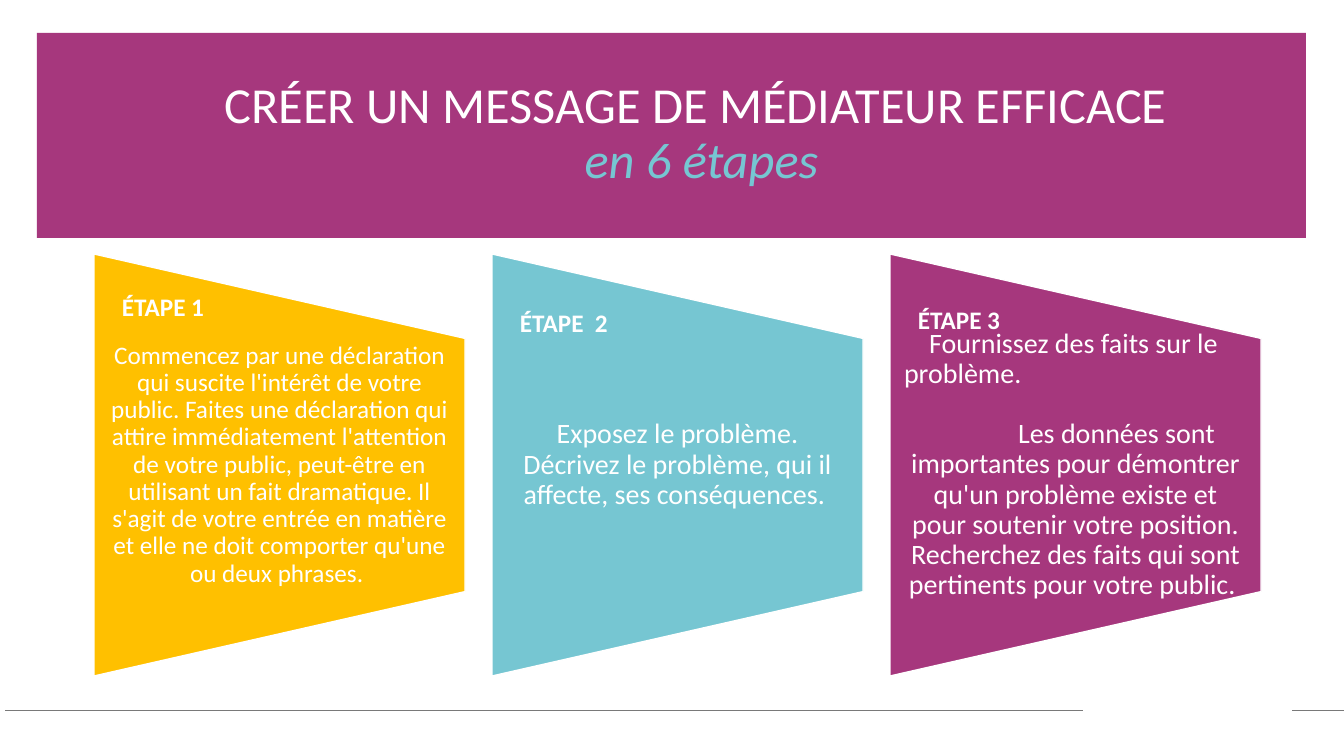
from pptx import Presentation
from pptx import util as u
from pptx.dml.color import RGBColor
from pptx.enum import shapes, text
from pptx.oxml.ns import qn
from lxml import etree

HUES = {"plum": "A6377D", "gold": "FFC000", "teal": "76C6D2",
        "white": "FFFFFF", "gray": "797979"}
TITLE = [("CRÉER UN MESSAGE DE MÉDIATEUR EFFICACE ", "white", False),
         ("en 6 étapes", "teal", True)]
STEPS = [
    {"label": "ÉTAPE 1", "top": 286, "hue": "gold", "size": 18, "inset": 12,
     "paras": [("Commencez par une déclaration qui suscite l'intérêt de votre public. "
                "Faites une déclaration qui attire immédiatement l'attention de votre "
                "public, peut-être en utilisant un fait dramatique. Il s'agit de votre "
                "entrée en matière et elle ne doit comporter qu'une ou deux phrases. ",
                "CENTER", 0)]},
    {"label": "ÉTAPE  2", "top": 302, "hue": "teal", "size": 20, "inset": 14,
     "paras": [("Exposez le problème. Décrivez le problème, qui il affecte, "
                "ses conséquences. ", "CENTER", 0)]},
    {"label": "ÉTAPE 3", "top": 299, "hue": "plum", "size": 20, "inset": 14,
     "paras": [("Fournissez des faits sur le problème.", "LEFT", 25),
               ("Les données sont importantes pour démontrer qu'un problème existe "
                "et pour soutenir votre position. Recherchez des faits qui sont "
                "pertinents pour votre public. ", "CENTER", 82)]},
]
RULES = [(1083, 5), (1344, 1292)]
LEFT, PITCH, WIDE, HIGH, MID = 94, 398, 371, 422, 465
BODY = 254


def px(n):
    return u.Emu(round(n * 914400 / 100.8))


def box(*nums):
    return [px(n) for n in nums]


def rgb(name):
    return RGBColor.from_string(HUES[name])


def style(item, **form):
    for key, val in form.items():
        setattr(item, key, val)


def ink(font, size, hue="white", **form):
    style(font, name="Calibri", size=u.Pt(size), **form)
    font.color.rgb = rgb(hue)


def block(kind, hue, *spot):
    shape = slide.shapes.add_shape(kind, *box(*spot))
    shape.shadow.inherit = False
    shape.fill.solid()
    shape.fill.fore_color.rgb = rgb(hue)
    return shape


def panel(step, x):
    trap = block(shapes.MSO_SHAPE.FLOWCHART_MANUAL_OPERATION, step["hue"],
                 x + (WIDE - HIGH) / 2, MID - WIDE / 2, HIGH, WIDE)
    trap.rotation = 270
    trap.line.color.rgb = rgb("white")
    trap.line.width = u.Pt(1)

    frame = slide.shapes.add_textbox(*box(x, MID - BODY / 2, WIDE, BODY)).text_frame
    side = px(step["inset"])
    style(frame, word_wrap=True, vertical_anchor=text.MSO_ANCHOR.MIDDLE,
          margin_left=side, margin_right=side, margin_top=0, margin_bottom=0)
    for i, (words, align, indent) in enumerate(step["paras"]):
        para = frame.paragraphs[0] if i == 0 else frame.add_paragraph()
        style(para, alignment=getattr(text.PP_ALIGN, align), line_spacing=0.9)
        if i:
            para.space_before = px(30)
        if indent:
            para._p.get_or_add_pPr().set("indent", str(px(indent)))
        run = para.add_run()
        run.text = words
        ink(run.font, step["size"])


def label(step, x):
    frame = slide.shapes.add_textbox(*box(x + 18, step["top"], 120, 40)).text_frame
    frame.word_wrap = False
    run = frame.paragraphs[0].add_run()
    run.text = step["label"]
    ink(run.font, 18, bold=True)


deck = Presentation()
style(deck, slide_width=px(1344), slide_height=px(756))
slide = deck.slides.add_slide(deck.slide_layouts[5])

banner = block(shapes.MSO_SHAPE.RECTANGLE, "plum", 37, 33, 1269, 205)
banner.line.fill.background()
for start, end in RULES:
    rule = slide.shapes.add_connector(shapes.MSO_CONNECTOR.STRAIGHT,
                                      *box(start, 710, end, 710))
    rule.line.color.rgb = rgb("gray")
    rule.line.width = u.Pt(0.5)
    etree.SubElement(rule._element.spPr, qn("a:effectLst"))

title = slide.shapes.title
slide.shapes._spTree.append(title._element)
for key, val in zip(("left", "top", "width", "height"), box(87, 75, 1229, 148)):
    setattr(title, key, val)
style(title.text_frame, word_wrap=True, auto_size=text.MSO_AUTO_SIZE.NONE,
      vertical_anchor=text.MSO_ANCHOR.TOP)
head = title.text_frame.paragraphs[0]
style(head, alignment=text.PP_ALIGN.CENTER, line_spacing=0.9)
for i, (words, hue, slant) in enumerate(TITLE):
    if i:
        head.add_line_break()
    run = head.add_run()
    run.text = words
    ink(run.font, 36, hue, italic=slant)

for draw in (panel, label):
    for i, step in enumerate(STEPS):
        draw(step, LEFT + i * PITCH)

deck.save("out.pptx")
